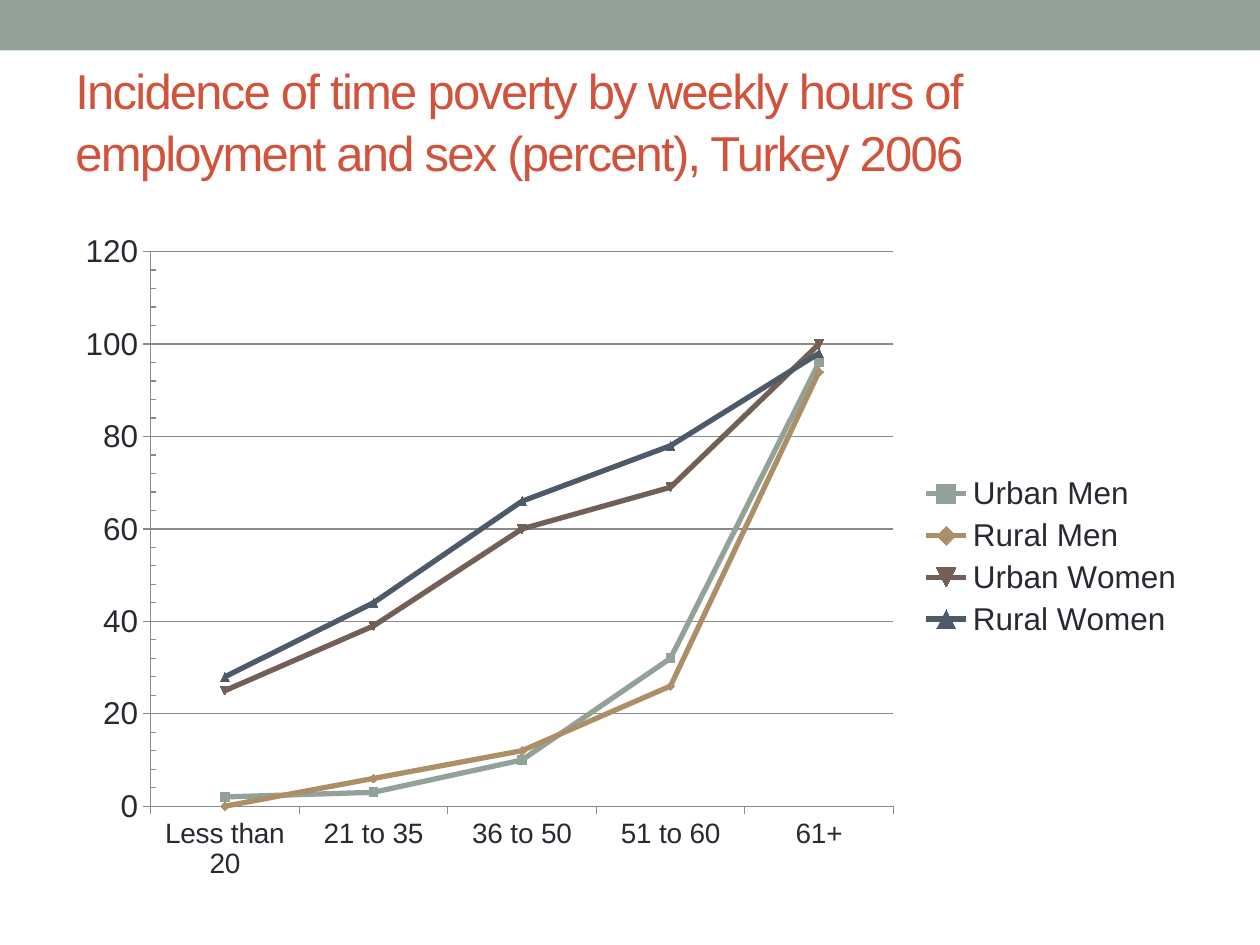
from dataclasses import dataclass

from pptx import Presentation
from pptx.chart.data import CategoryChartData
from pptx.dml.color import RGBColor
from pptx.enum import chart as ch, shapes, text
from pptx.util import Pt


@dataclass(frozen=True)
class Theme:
    font: str = "Arial"
    band: str = "93A299"
    title: str = "D2533C"
    ink: str = "292934"
    axis: str = "8A8A8A"
    title_size: int = 28
    chart_size: int = 18
    category_size: int = 16


THEME = Theme()
CATEGORIES = ["Less than 20", "21 to 35", "36 to 50", "51 to 60", "61+"]
SERIES = [
    ("Urban Men", "93A299", (2, 3, 10, 32, 96)),
    ("Rural Men", "AD8F67", (0, 6, 12, 26, 94)),
    ("Urban Women", "726056", (25, 39, 60, 69, 100)),
    ("Rural Women", "4C5A6A", (28, 44, 66, 78, 98)),
]


def rgb(value):
    return RGBColor.from_string(value)


def style_font(font, size, color):
    font.name = THEME.font
    font.size = Pt(size)
    font.color.rgb = rgb(color)


def style_line(line, color, width):
    line.color.rgb = rgb(color)
    line.width = Pt(width)


def add_band(s, width, height):
    sp = s.shapes.add_shape(shapes.MSO_SHAPE.RECTANGLE, 0, 0, Pt(width), Pt(height))
    sp.shadow.inherit = False
    sp.fill.solid()
    sp.fill.fore_color.rgb = rgb(THEME.band)
    sp.line.fill.background()


def add_title(s, wording, left, top, width, height):
    sp = s.shapes.add_textbox(Pt(left), Pt(top), Pt(width), Pt(height))
    tf = sp.text_frame
    tf.word_wrap = True
    tf.vertical_anchor = text.MSO_ANCHOR.MIDDLE
    tf.text = wording
    p = tf.paragraphs[0]
    p.line_spacing = 1.05
    r = p.runs[0]
    style_font(r.font, THEME.title_size, THEME.title)
    r._r.get_or_add_rPr().set("spc", "-100")  # tighten letters by 1 pt


def add_line_chart(s, left, top, width, height):
    data = CategoryChartData(number_format="0")
    data.categories = CATEGORIES
    for name, _, values in SERIES:
        data.add_series(name, values)
    chart = s.shapes.add_chart(
        ch.XL_CHART_TYPE.LINE_MARKERS, Pt(left), Pt(top), Pt(width), Pt(height), data
    ).chart
    chart.has_title = False
    style_font(chart.font, THEME.chart_size, THEME.ink)
    chart.has_legend = True
    chart.legend.position = ch.XL_LEGEND_POSITION.RIGHT
    chart.legend.include_in_layout = False

    # Axes
    cat, val = chart.category_axis, chart.value_axis
    for axis in (cat, val):
        axis.major_tick_mark = ch.XL_TICK_MARK.OUTSIDE
        style_line(axis.format.line, THEME.axis, 0.75)
    style_font(cat.tick_labels.font, THEME.category_size, THEME.ink)
    cat.minor_tick_mark = ch.XL_TICK_MARK.NONE
    val.minor_tick_mark = ch.XL_TICK_MARK.INSIDE
    val.minimum_scale, val.maximum_scale = 0, 120
    val.major_unit, val.minor_unit = 20, 4
    val.has_major_gridlines = True
    style_line(val.major_gridlines.format.line, THEME.axis, 0.75)

    # Series
    plot = chart.plots[0]
    plot.vary_by_categories = False
    for series, (_, color, _) in zip(plot.series, SERIES):
        series.smooth = False
        style_line(series.format.line, color, 3)
        series.marker.size = 5
        series.marker.format.fill.solid()
        series.marker.format.fill.fore_color.rgb = rgb(color)


def main():
    prs = Presentation()
    prs.slide_width, prs.slide_height = Pt(720), Pt(540)
    s = prs.slides.add_slide(prs.slide_layouts[6])

    # Header
    add_band(s, 720, 28.8)
    add_title(
        s,
        "Incidence of time poverty by weekly hours of employment and sex (percent), Turkey 2006",
        36, 30, 648, 77,
    )

    # Time poverty by hours worked
    add_line_chart(s, 36, 126, 648, 384)

    prs.save("out.pptx")


if __name__ == "__main__":
    main()
